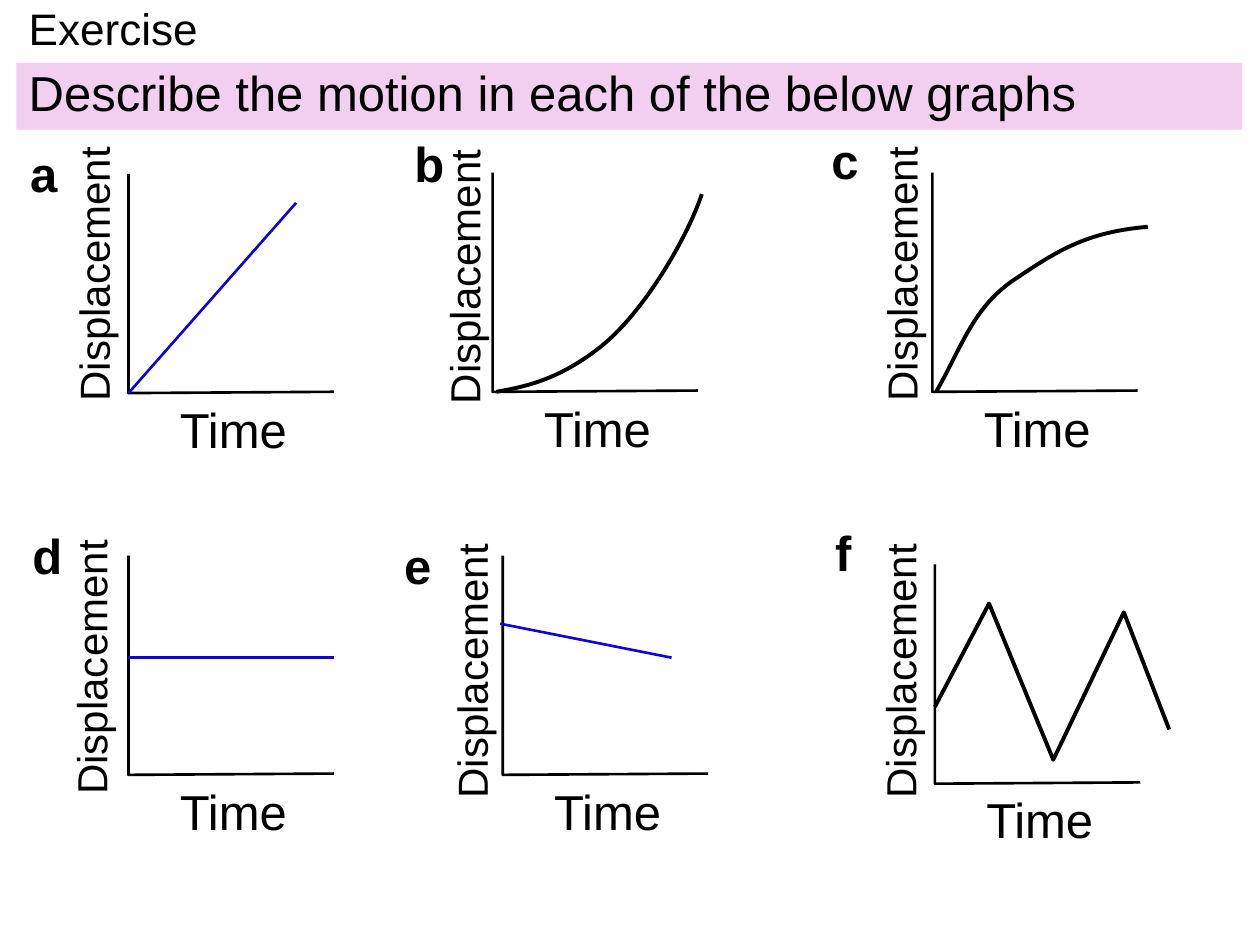
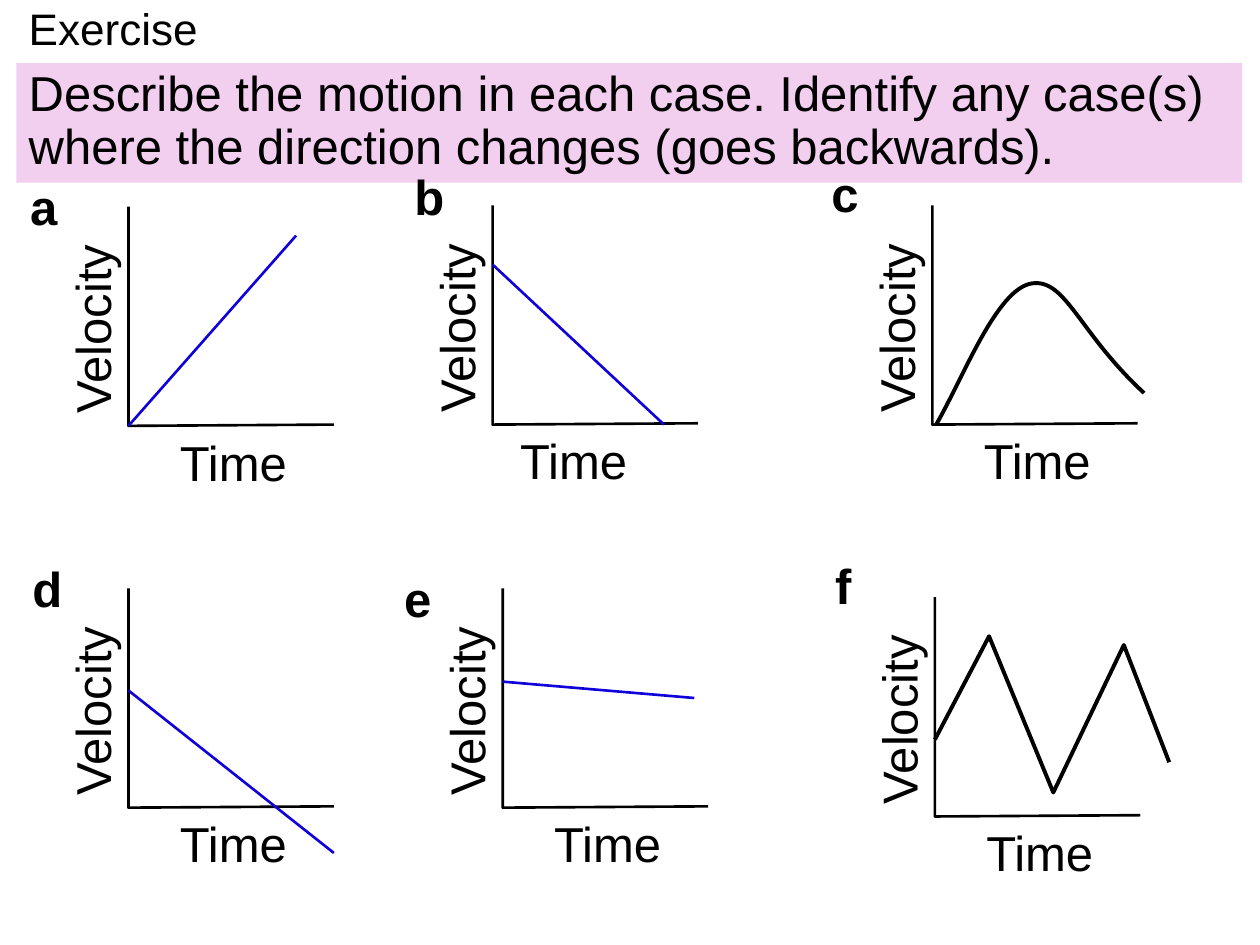
import pptx
import pptx.dml.color
import pptx.enum.shapes
import pptx.enum.text
import pptx.oxml.ns
import pptx.oxml.xmlchemy
import pptx.util
from pptx.util import Inches

COLOURS = {"text": "000000", "band": "F2CFEE", "axis": "000000",
           "curve": "000000", "straight": "1001D9"}
FONT = "Arial"
LABEL_SIZE = 28

# Letter: graph origin, then left, top and width of the letter
GRAPHS = {
    "a": ((1.02, 3.12), (0.14, 1.09, 0.42)),
    "b": ((3.91, 3.11), (3.19, 1.01, 0.43)),
    "c": ((7.40, 3.11), (6.50, 0.99, 0.43)),
    "d": ((1.02, 6.15), (0.16, 4.12, 0.43)),
    "e": ((3.99, 6.15), (3.11, 4.20, 0.43)),
    "f": ((7.42, 6.22), (6.53, 4.10, 0.33)),
}

# Plots in inches right of and above the graph origin
STEADY_RISE = ("line", [(0, 0), (1.33, 1.51)])
ZIGZAG = ("polyline", [(0, 0.61), (0.43, 1.43), (0.94, 0.19), (1.5, 1.36), (1.86, 0.43)])

DISPLACEMENT_PLOTS = {
    "a": STEADY_RISE,
    "b": ("curve", [(0.03, 0), (0.25, 0.04), (0.52, 0.09), (0.86, 0.36),
                    (1.2, 0.63), (1.55, 1.23), (1.66, 1.57)]),
    "c": ("curve", [(0.03, 0), (0.24, 0.37), (0.33, 0.69), (0.68, 0.91),
                    (1.02, 1.14), (1.25, 1.27), (1.71, 1.31)]),
    "d": ("line", [(0, 0.93), (1.63, 0.93)]),
    "e": ("line", [(-0.02, 1.2), (1.34, 0.93)]),
    "f": ZIGZAG,
}
VELOCITY_PLOTS = {
    "a": STEADY_RISE,
    "b": ("line", [(0, 1.27), (1.36, 0)]),
    "c": ("curve", [(0.03, 0), (0.24, 0.36), (0.51, 1.08), (0.79, 1.12),
                    (1.06, 1.16), (1.16, 0.73), (1.68, 0.25)]),
    "d": ("line", [(0, 0.93), (1.63, -0.36)]),
    "e": ("line", [(0, 1), (1.52, 0.87)]),
    "f": ZIGZAG,
}

# Centre of the vertical axis label, right of and above the origin
DISPLACEMENT_LABELS = {"a": (-0.28, 1.03), "b": (-0.23, 1.0), "c": (-0.25, 1.02),
                       "d": (-0.3, 0.94), "e": (-0.25, 0.91), "f": (-0.28, 0.98)}
VELOCITY_LABELS = dict.fromkeys(GRAPHS, (-0.29, 0.87))


def colour(name):
    return pptx.dml.color.RGBColor.from_string(COLOURS[name])


def add_text(slide, text, left, top, width, height, size=LABEL_SIZE, bold=False, wrap=True):
    shape = slide.shapes.add_textbox(Inches(left), Inches(top), Inches(width), Inches(height))
    shape.text_frame.word_wrap = wrap
    paragraph = shape.text_frame.paragraphs[0]
    paragraph.text = text
    paragraph.font.name = FONT
    paragraph.font.size = pptx.util.Pt(size)
    paragraph.font.bold = bold
    paragraph.font.color.rgb = colour("text")
    return shape


def add_heading(slide, task, band_height):
    title = add_text(slide, "Exercise", 0.13, 0, 7.23, 0.5, size=25.2)
    title.text_frame.vertical_anchor = pptx.enum.text.MSO_ANCHOR.MIDDLE
    band = add_text(slide, task, 0.13, 0.5, 9.73, band_height)
    band.fill.solid()
    band.fill.fore_color.rgb = colour("band")
    band.text_frame.paragraphs[0].space_before = pptx.util.Pt(10)
    for shape in (title, band):
        shape.text_frame.paragraphs[0].line_spacing = 0.9


def style_line(shape, colour_name, width):
    shape.line.color.rgb = colour(colour_name)
    shape.line.width = pptx.util.Pt(width)


def add_outline(slide, points, colour_name, width):
    start, *rest = [(Inches(x), Inches(y)) for x, y in points]
    builder = slide.shapes.build_freeform(*start)
    builder.add_line_segments(rest, close=False)
    shape = builder.convert_to_shape()
    shape.shadow.inherit = False
    shape.fill.background()
    style_line(shape, colour_name, width)
    return shape


def bend(shape):
    """Turn each three line segments into one cubic Bézier segment."""
    qualified = pptx.oxml.ns.qn
    segments = list(shape._element.iter(qualified("a:lnTo")))
    for first in range(0, len(segments), 3):
        cubic = pptx.oxml.xmlchemy.OxmlElement("a:cubicBezTo")
        segments[first].addprevious(cubic)
        for segment in segments[first:first + 3]:
            cubic.append(segment.find(qualified("a:pt")))
            segment.getparent().remove(segment)


def add_straight(slide, start, end):
    connector = slide.shapes.add_connector(
        pptx.enum.shapes.MSO_CONNECTOR.STRAIGHT,
        *[Inches(value) for value in (*start, *end)])
    style_line(connector, "straight", 1.5)
    connector._element.spPr.append(pptx.oxml.xmlchemy.OxmlElement("a:effectLst"))


def add_plot(slide, kind, points):
    if kind == "line":
        add_straight(slide, *points)
        return
    shape = add_outline(slide, points, "curve", 2.25)
    if kind == "curve":
        bend(shape)


def add_axis_label(slide, text, centre, width, height, size):
    x, y = centre
    label = add_text(slide, text, x - width / 2, y - height / 2, width, height, size)
    label.rotation = 270


def add_graph(slide, origin, plot, label, label_offset, time_offset):
    def place(point):
        return origin[0] + point[0], origin[1] - point[1]

    add_outline(slide, [place(point) for point in ((0, 1.74), (0, 0), (1.63, 0.01))],
                "axis", 1.5)
    add_text(slide, "Time", origin[0] + time_offset, origin[1], 1.3, 0.57)
    add_axis_label(slide, label[0], place(label_offset), *label[1:])
    kind, points = plot
    add_plot(slide, kind, [place(point) for point in points])


def add_exercise(presentation, task, band_height, plots, label, label_offsets,
                 shift=0, time_offsets=None):
    slide = presentation.slides.add_slide(presentation.slide_layouts[6])
    add_heading(slide, task, band_height)
    for letter, ((x, y), (left, top, width)) in GRAPHS.items():
        add_graph(slide, (x, y + shift), plots[letter], label, label_offsets[letter],
                  (time_offsets or {}).get(letter, 0.31))
        letter_box = add_text(slide, letter, left, top + shift, width, 0.57,
                              bold=True, wrap=False)
        letter_box.text_frame.paragraphs[0].space_after = pptx.util.Pt(12)


def main():
    presentation = pptx.Presentation()
    presentation.slide_width = Inches(10)
    presentation.slide_height = Inches(7.5)

    # Displacement against time
    add_exercise(presentation, "Describe the motion in each of the below graphs", 0.53,
                 DISPLACEMENT_PLOTS, ("Displacement", 2.39, 0.5, 24), DISPLACEMENT_LABELS)

    # Velocity against time, lower to clear the taller band
    add_exercise(presentation,
                 "Describe the motion in each case. Identify any case(s) "
                 "where the direction changes (goes backwards).", 0.95,
                 VELOCITY_PLOTS, ("Velocity", 1.74, 0.57, LABEL_SIZE), VELOCITY_LABELS,
                 shift=0.26, time_offsets={"b": 0.12})

    presentation.save("out.pptx")


if __name__ == "__main__":
    main()
